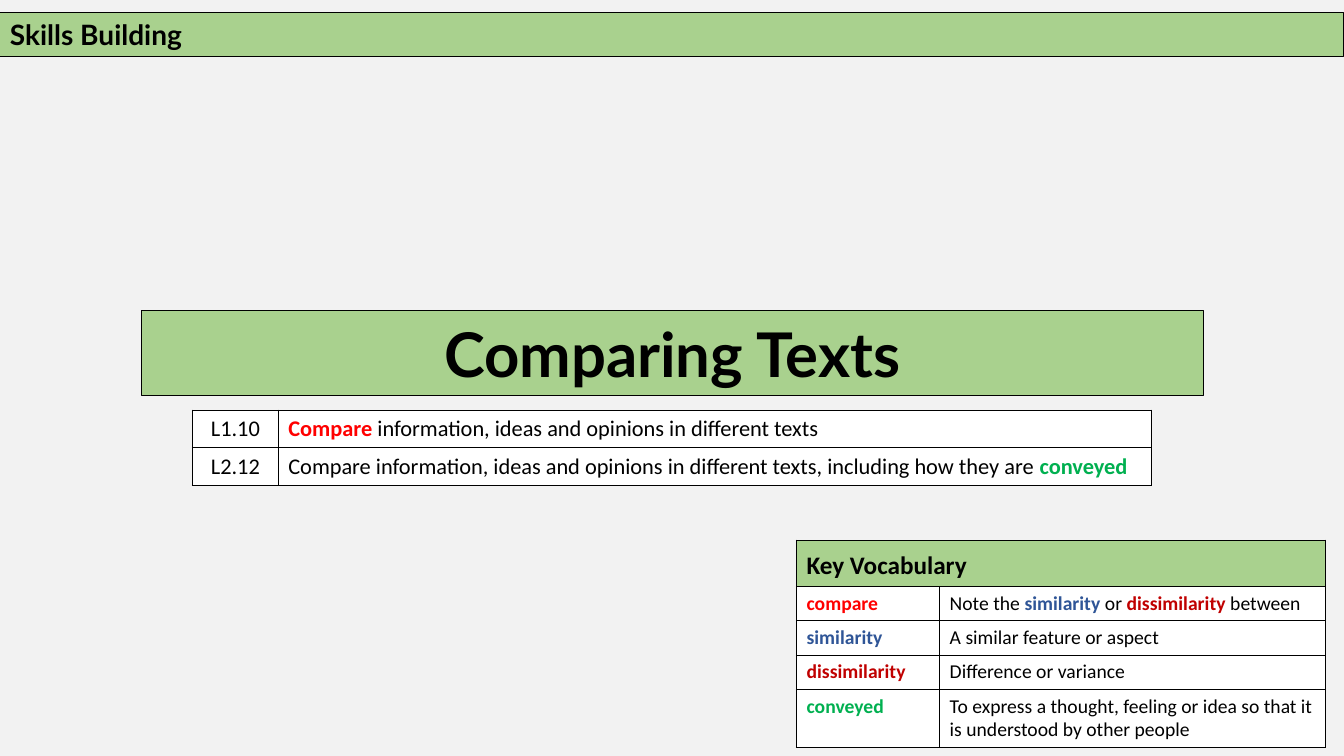
from pptx import Presentation
from pptx.dml.color import RGBColor
from pptx.enum import shapes, text
from pptx.oxml import parse_xml
from pptx.oxml.ns import nsdecls
from pptx.util import Inches, Pt

BLACK = RGBColor(0x00, 0x00, 0x00)
WHITE = RGBColor(0xFF, 0xFF, 0xFF)
PAPER = RGBColor(0xF2, 0xF2, 0xF2)
LEAF = RGBColor(0xA9, 0xD1, 0x8E)
RED = RGBColor(0xFF, 0x00, 0x00)
BLUE = RGBColor(0x2F, 0x55, 0x97)
CRIMSON = RGBColor(0xC0, 0x00, 0x00)
GREEN = RGBColor(0x00, 0xB0, 0x50)

OBJECTIVES = [
    ("L1.10", [("Compare", RED),
               (" information, ideas and opinions in different texts", BLACK)]),
    ("L2.12", [("Compare information, ideas and opinions in different texts, "
                "including how they are ", BLACK), ("conveyed", GREEN)]),
]
VOCABULARY = [
    ("compare", RED, [("Note the ", BLACK), ("similarity", BLUE), (" or ", BLACK),
                      ("dissimilarity", CRIMSON), (" between", BLACK)]),
    ("similarity", BLUE, [("A similar feature or aspect", BLACK)]),
    ("dissimilarity", CRIMSON, [("Difference or variance", BLACK)]),
    ("conveyed", GREEN, [("To express a thought, feeling or idea so that it "
                          "is understood by other people", BLACK)]),
]


def format_run(run, font_name, size, color, bold):
    """Set the font of one run."""
    run.font.name = font_name
    run.font.size = Pt(size)
    run.font.color.rgb = color
    run.font.bold = bold


def fill_banner(shape, box, wording, size, alignment):
    """Place a green outlined bar with one bold line of text."""
    shape.left, shape.top, shape.width, shape.height = (Inches(side) for side in box)
    shape.fill.solid()
    shape.fill.fore_color.rgb = LEAF
    shape.line.color.rgb = BLACK
    shape.line.width = Pt(0.75)
    frame = shape.text_frame
    frame.text = wording
    frame.auto_size = text.MSO_AUTO_SIZE.NONE
    frame.vertical_anchor = text.MSO_ANCHOR.MIDDLE
    paragraph = frame.paragraphs[0]
    paragraph.alignment = alignment
    format_run(paragraph.runs[0], "Lato", size, BLACK, True)


def border_cell(cell):
    """Draw a thin black line on all four sides of a cell."""
    properties = cell._tc.get_or_add_tcPr()
    for position, side in enumerate(("lnL", "lnR", "lnT", "lnB")):
        properties.insert(position, parse_xml(
            f'<a:{side} {nsdecls("a")} w="12700"><a:solidFill>'
            f'<a:srgbClr val="{BLACK}"/></a:solidFill></a:{side}>'))


def add_grid(slide, left, top, column_widths, row_heights):
    """Add a white table with black borders."""
    frame = slide.shapes.add_table(
        len(row_heights), len(column_widths), Inches(left), Inches(top),
        Inches(sum(column_widths)), Inches(sum(row_heights)))
    table = frame.table
    table.first_row = table.horz_banding = False
    for column, width in zip(table.columns, column_widths):
        column.width = Inches(width)
    for row, height in zip(table.rows, row_heights):
        row.height = Inches(height)
    for cell in table.iter_cells():
        cell.fill.solid()
        cell.fill.fore_color.rgb = WHITE
        border_cell(cell)
    return table


def write_cell(cell, pieces, size):
    """Write coloured pieces of text, with the key words in bold."""
    paragraph = cell.text_frame.paragraphs[0]
    for wording, color in pieces:
        run = paragraph.add_run()
        run.text = wording
        format_run(run, "Calibri", size, color, color != BLACK)
    return paragraph


def add_objectives(slide, left, top):
    """Add the table of learning objectives."""
    table = add_grid(slide, left, top, [0.85, 8.66], [0.37] * len(OBJECTIVES))
    for row, (code, pieces) in enumerate(OBJECTIVES):
        paragraph = write_cell(table.cell(row, 0), [(code, BLACK)], 16)
        paragraph.alignment = text.PP_ALIGN.CENTER
        write_cell(table.cell(row, 1), pieces, 16)


def add_vocabulary(slide, left, top):
    """Add the key vocabulary table under its green heading."""
    table = add_grid(slide, left, top, [1.42, 3.83], [0.46, 0.34, 0.34, 0.34, 0.57])
    heading = table.cell(0, 0)
    heading.merge(table.cell(0, 1))
    heading.fill.fore_color.rgb = LEAF
    heading.margin_top = Inches(0.1)
    paragraph = write_cell(heading, [("Key Vocabulary", BLACK)], 18)
    paragraph.runs[0].font.bold = True
    for row, (term, color, pieces) in enumerate(VOCABULARY, start=1):
        write_cell(table.cell(row, 0), [(term, color)], 14)
        write_cell(table.cell(row, 1), pieces, 14)


def build_title_slide(presentation):
    """Build the opening slide of the lesson."""
    slide = presentation.slides.add_slide(presentation.slide_layouts[5])
    slide.background.fill.solid()
    slide.background.fill.fore_color.rgb = PAPER
    fill_banner(slide.shapes.title, (1.4, 3.08, 10.54, 0.84),
                "Comparing Texts", 44, text.PP_ALIGN.CENTER)
    strip = slide.shapes.add_shape(shapes.MSO_SHAPE.RECTANGLE, 0, 0, 0, 0)
    strip.shadow.inherit = False
    fill_banner(strip, (0, 0.12, 13.33, 0.44),
                "Skills Building", 20, text.PP_ALIGN.LEFT)
    add_objectives(slide, 1.91, 4.07)
    add_vocabulary(slide, 7.9, 5.36)


def main():
    """Create and save the presentation."""
    presentation = Presentation()
    presentation.slide_width = Inches(13.33)
    presentation.slide_height = Inches(7.5)
    build_title_slide(presentation)
    presentation.save("out.pptx")


if __name__ == "__main__":
    main()
